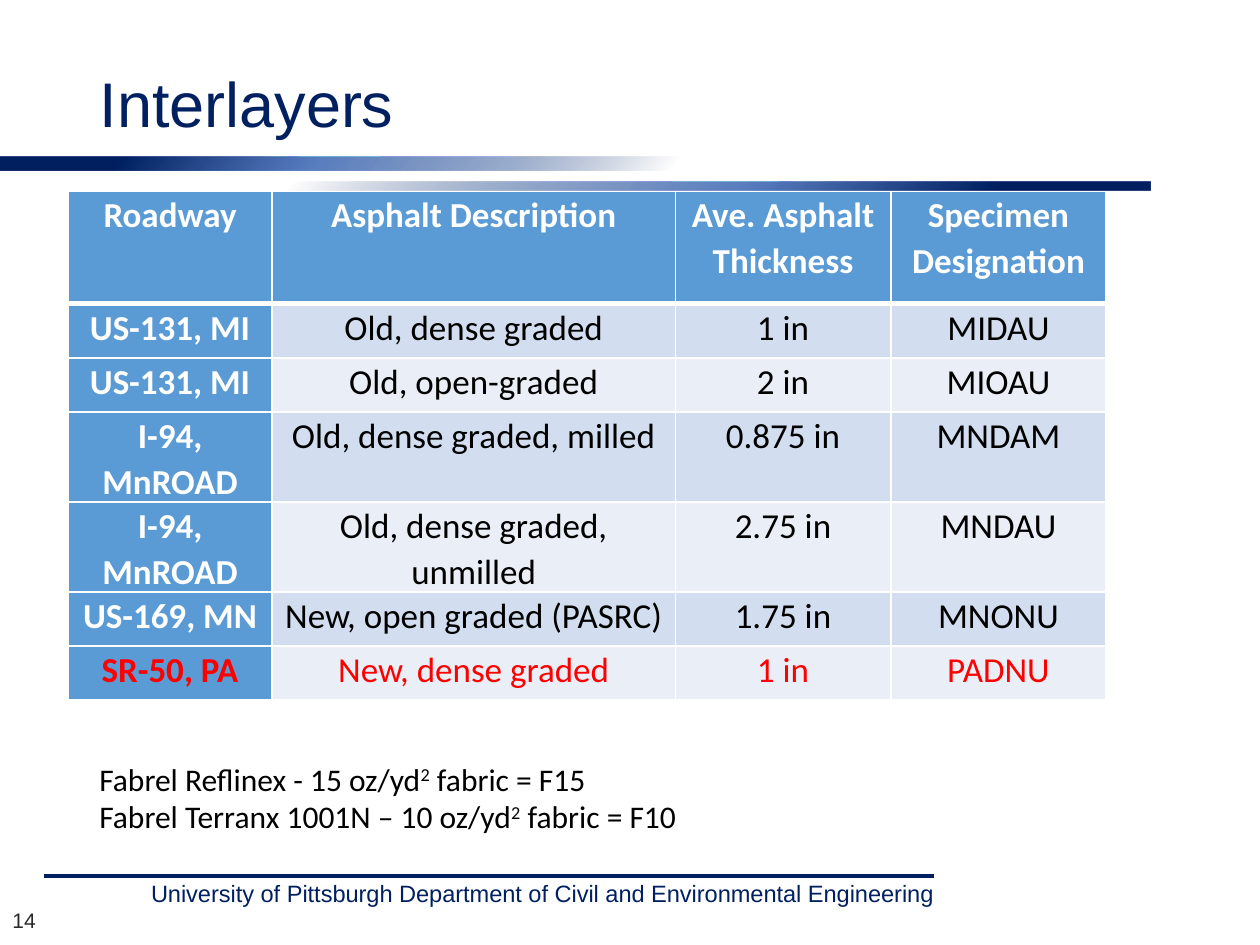
from lxml.etree import SubElement
from pptx import Presentation
from pptx.dml.color import RGBColor
from pptx.enum.shapes import MSO_CONNECTOR, MSO_SHAPE
from pptx.enum.text import MSO_ANCHOR, MSO_AUTO_SIZE, PP_ALIGN
from pptx.oxml import parse_xml
from pptx.oxml.ns import nsdecls, qn
from pptx.util import Inches, Pt

NAVY = RGBColor(0x00, 0x20, 0x60)
CHARCOAL = RGBColor(0x29, 0x29, 0x29)
BLACK = RGBColor(0x00, 0x00, 0x00)
WHITE = RGBColor(0xFF, 0xFF, 0xFF)
RED = RGBColor(0xFF, 0x00, 0x00)
HEADER_BLUE = RGBColor(0x5B, 0x9B, 0xD5)
BAND_DARK = RGBColor(0xD2, 0xDE, 0xEF)
BAND_LIGHT = RGBColor(0xEA, 0xEF, 0xF7)

# Content
TITLE = "Interlayers"
FOOTER = "University of Pittsburgh Department of Civil and Environmental Engineering"
SLIDE_NUMBER = "14"
ROWS = [
    ("Roadway", "Asphalt Description", "Ave. Asphalt Thickness", "Specimen Designation"),
    ("US-131, MI", "Old, dense graded", "1 in", "MIDAU"),
    ("US-131, MI", "Old, open-graded", "2 in", "MIOAU"),
    ("I-94, MnROAD", "Old, dense graded, milled", "0.875 in", "MNDAM"),
    ("I-94, MnROAD", "Old, dense graded, unmilled", "2.75 in", "MNDAU"),
    ("US-169, MN", "New, open graded (PASRC)", "1.75 in", "MNONU"),
    ("SR-50, PA", "New, dense graded", "1 in", "PADNU"),
]
HIGHLIGHTED_ROW = len(ROWS) - 1
COLUMN_WIDTHS = (1.62, 3.2, 1.71, 1.71)
HEADER_HEIGHT, ROW_HEIGHT = 0.89, 0.43
# Each note is split around its superscript
FABRIC_NOTES = [
    ("Fabrel Reflinex - 15 oz/yd", "2", " fabric = F15"),
    ("Fabrel Terranx 1001N – 10 oz/yd", "2", " fabric = F10"),
]
# Position %, colour, opacity %
FADE_STOPS = [(16, NAVY, 100), (41, RGBColor(0x38, 0x64, 0xB3), 84),
              (67, RGBColor(0x2F, 0x55, 0x97), 48), (88, NAVY, 0)]
# Left, top, width, height, rotation
TITLE_BARS = [(0, 1.24, 6.04, 0.11, 0), (1.4, 1.44, 7.73, 0.07, 180)]


def format_font(font, name, size, color, bold=False):
    font.name, font.size, font.bold = name, Pt(size), bold
    font.color.rgb = color


def add_text(slide, box, text, size, color, anchor=MSO_ANCHOR.TOP):
    frame = slide.shapes.add_textbox(*map(Inches, box)).text_frame
    frame.text = text
    frame.word_wrap = True
    frame.vertical_anchor = anchor
    format_font(frame.paragraphs[0].runs[0].font, "Arial", size, color)


def add_fading_bar(slide, left, top, width, height, rotation):
    bar = slide.shapes.add_shape(
        MSO_SHAPE.RECTANGLE, *map(Inches, (left, top, width, height)))
    bar.shadow.inherit = False
    bar.rotation = rotation
    bar.line.fill.background()
    stops = "".join(
        f'<a:gs pos="{position * 1000}"><a:srgbClr val="{color}">'
        f'<a:alpha val="{opacity * 1000}"/></a:srgbClr></a:gs>'
        for position, color, opacity in FADE_STOPS)
    gradient = parse_xml(
        f'<a:gradFill {nsdecls("a")} rotWithShape="1"><a:gsLst>{stops}</a:gsLst>'
        '<a:lin ang="2400000" scaled="0"/></a:gradFill>')
    bar._element.spPr.find(qn("a:prstGeom")).addnext(gradient)


def set_borders(cell, top, bottom):
    properties = cell._tc.get_or_add_tcPr()
    sides = (("L", 1), ("R", 1), ("T", top), ("B", bottom))
    for index, (side, width) in enumerate(sides):
        properties.insert(index, parse_xml(
            f'<a:ln{side} {nsdecls("a")} w="{Pt(width)}"><a:solidFill>'
            f'<a:srgbClr val="{WHITE}"/></a:solidFill></a:ln{side}>'))


def format_cell(cell, text, row, column):
    heading = row == 0 or column == 0
    cell.text = text
    cell.margin_left = cell.margin_right = Inches(0.07)
    cell.margin_top = cell.margin_bottom = 0
    cell.fill.solid()
    cell.fill.fore_color.rgb = (
        HEADER_BLUE if heading else BAND_DARK if row % 2 else BAND_LIGHT)
    set_borders(cell, top=3 if row == 1 else 1, bottom=3 if row == 0 else 1)
    paragraph = cell.text_frame.paragraphs[0]
    paragraph.alignment = PP_ALIGN.CENTER
    paragraph.line_spacing = 1.07
    color = RED if row == HIGHLIGHTED_ROW else WHITE if heading else BLACK
    format_font(paragraph.runs[0].font, "Calibri", 20, color, heading)


def add_roadway_table(slide):
    height = HEADER_HEIGHT + ROW_HEIGHT * (len(ROWS) - 1)
    table = slide.shapes.add_table(
        len(ROWS), len(COLUMN_WIDTHS), Inches(0.54), Inches(1.52),
        Inches(sum(COLUMN_WIDTHS)), Inches(height)).table
    for column, width in zip(table.columns, COLUMN_WIDTHS):
        column.width = Inches(width)
    for row, texts in enumerate(ROWS):
        table.rows[row].height = Inches(ROW_HEIGHT if row else HEADER_HEIGHT)
        for column, text in enumerate(texts):
            format_cell(table.cell(row, column), text, row, column)


def add_fabric_notes(slide):
    box = slide.shapes.add_textbox(*map(Inches, (0.69, 5.98, 4.96, 0.71)))
    frame = box.text_frame
    frame.word_wrap = False
    for index, parts in enumerate(FABRIC_NOTES):
        paragraph = frame.add_paragraph() if index else frame.paragraphs[0]
        for text in parts:
            run = paragraph.add_run()
            run.text = text
            format_font(run.font, "Calibri", 18, BLACK)
        paragraph.runs[1].font._element.set("baseline", "30000")


def main():
    presentation = Presentation()
    presentation.slide_width, presentation.slide_height = Inches(10), Inches(7.5)
    slide = presentation.slides.add_slide(presentation.slide_layouts[5])

    # Footer rule and text
    rule = slide.shapes.add_connector(
        MSO_CONNECTOR.STRAIGHT, *map(Inches, (0.35, 6.95, 7.41, 6.95)))
    rule.line.color.rgb = NAVY
    rule.line.width = Pt(2.25)
    SubElement(rule._element.spPr, qn("a:effectLst"))
    add_text(slide, (1.1, 6.93, 6.52, 0.33), FOOTER, 13.5, NAVY)

    # Bars under the title
    for bar in TITLE_BARS:
        add_fading_bar(slide, *bar)

    # Title
    title = slide.shapes.title
    title.left, title.top, title.width, title.height = map(
        Inches, (0.69, 0.4, 8.62, 0.9))
    frame = title.text_frame
    frame.text = TITLE
    frame.auto_size = MSO_AUTO_SIZE.NONE
    frame.vertical_anchor = MSO_ANCHOR.MIDDLE
    paragraph = frame.paragraphs[0]
    paragraph.alignment = PP_ALIGN.LEFT
    paragraph.line_spacing = 0.9
    format_font(paragraph.runs[0].font, "Arial", 36, NAVY)

    # Slide number, table and notes
    add_text(slide, (0, 7.1, 2.25, 0.4), SLIDE_NUMBER, 12, CHARCOAL,
             MSO_ANCHOR.MIDDLE)
    add_roadway_table(slide)
    add_fabric_notes(slide)

    presentation.save("out.pptx")


if __name__ == "__main__":
    main()
